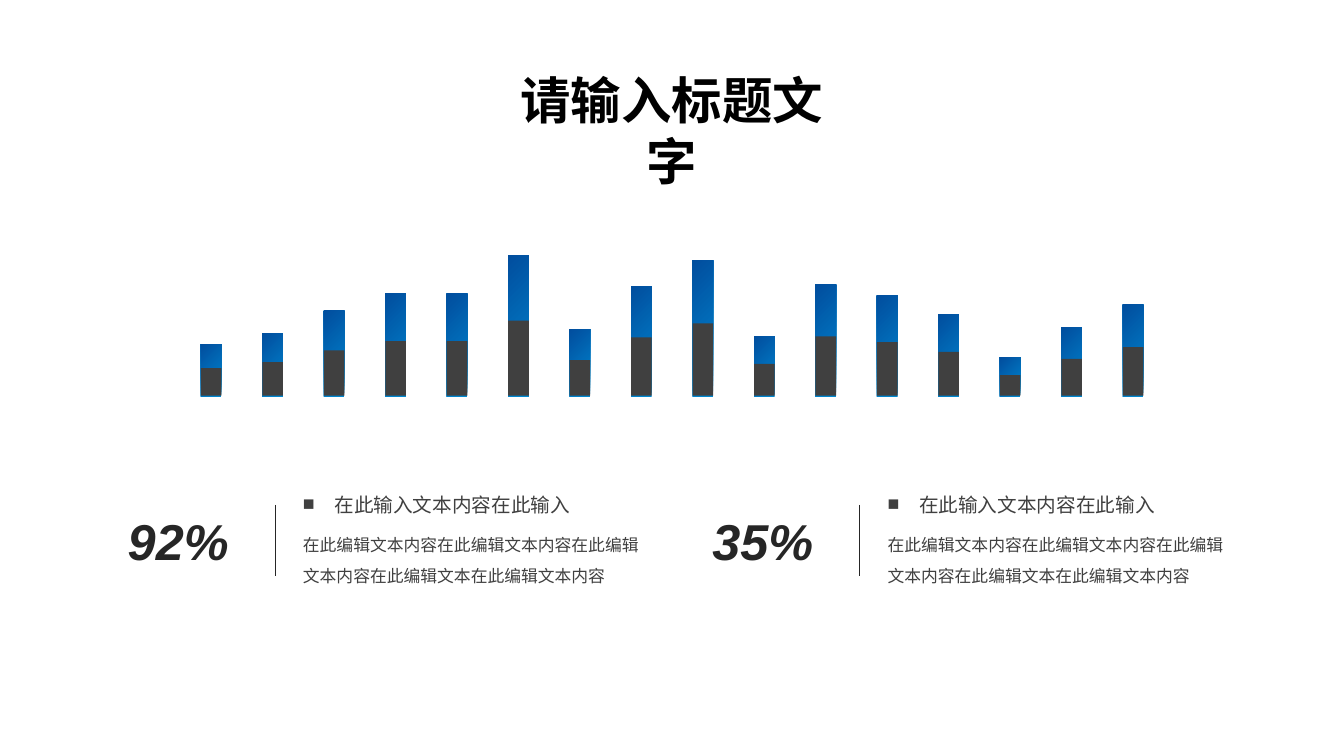
from lxml import etree
from pptx import Presentation
from pptx.dml.color import RGBColor
from pptx.enum import shapes, text
from pptx.oxml.ns import qn
from pptx.util import Pt

COLORS = {"light blue": "008AD3", "deep blue": "014E9E", "dark": "404040",
          "accent": "262626", "title": "000000"}
CJK_FONT = "Noto Sans CJK SC"
BAR_HEIGHTS = [36.7, 44.6, 60.5, 72.7, 72.7, 100.1, 47.5, 77.8,
               96.5, 42.5, 79.2, 71.3, 58.3, 27.4, 49, 64.8]
BAR_LEFT, BAR_PITCH, BAR_WIDTH = 143.5, 43.9, 14.7
BASELINE, BASE_STRIP, DARK_SHARE = 282.6, 0.7, 0.535
STATISTICS = [(84.2, 112.3, "92%"), (501.8, 95, "35%")]
DIVIDERS = [196.6, 614.2]
HEADING = "在此输入文本内容在此输入"
BODY = "在此编辑文本内容在此编辑文本内容在此编辑文本内容在此编辑文本在此编辑文本内容"


def color(name):
    return RGBColor.from_string(COLORS[name])


def write(shape, words, color_name, format_values, wrap=True):
    """Fill the shape with one formatted paragraph and return it."""
    frame = shape.text_frame
    frame.word_wrap = wrap
    frame.auto_size = text.MSO_AUTO_SIZE.SHAPE_TO_FIT_TEXT
    frame.vertical_anchor = text.MSO_ANCHOR.TOP
    paragraph = frame.paragraphs[0]
    run = paragraph.add_run()
    run.text = words
    run.font.color.rgb = color(color_name)
    for name, value in format_values.items():
        setattr(run.font, name, value)
    etree.SubElement(run.font._element, qn("a:ea"), typeface=CJK_FONT)
    return paragraph


presentation = Presentation()
presentation.slide_width, presentation.slide_height = Pt(960), Pt(540)
slide = presentation.slides.add_slide(presentation.slide_layouts[5])

title = slide.shapes.title
title.left, title.top, title.width, title.height = Pt(346.6), Pt(46.1), Pt(266.4), Pt(51)
paragraph = write(title, "请输入标题文字", "title",
                  {"size": Pt(36), "bold": True, "name": CJK_FONT}, wrap=False)
paragraph.alignment = text.PP_ALIGN.CENTER

# Bars: a blue total with a dark share standing in front of it
for index, height in enumerate(BAR_HEIGHTS):
    left = BAR_LEFT + index * BAR_PITCH
    dark_height = height * DARK_SHARE
    total = slide.shapes.add_shape(
        shapes.MSO_SHAPE.RECTANGLE, Pt(left), Pt(BASELINE - height),
        Pt(BAR_WIDTH), Pt(height + BASE_STRIP))
    total.fill.gradient()
    total.fill.gradient_angle = 135
    for stop, position, name in zip(total.fill.gradient_stops, (0, 1),
                                    ("light blue", "deep blue")):
        stop.position = position
        stop.color.rgb = color(name)
    share = slide.shapes.add_shape(
        shapes.MSO_SHAPE.RECTANGLE, Pt(left), Pt(BASELINE - dark_height),
        Pt(BAR_WIDTH), Pt(dark_height))
    share.fill.solid()
    share.fill.fore_color.rgb = color("dark")
    for bar in (total, share):
        bar.line.fill.background()
        bar.shadow.inherit = False

for (left, width, percentage), divider_left in zip(STATISTICS, DIVIDERS):
    figure = slide.shapes.add_textbox(Pt(left), Pt(360.7), Pt(width), Pt(51))
    write(figure, percentage, "accent",
          {"size": Pt(36), "bold": True, "italic": True, "name": "Arial"})

    divider = slide.shapes.add_connector(
        shapes.MSO_CONNECTOR.STRAIGHT, Pt(divider_left), Pt(360.7), Pt(divider_left), Pt(411.1))
    divider.line.color.rgb = color("accent")
    divider.line.width = Pt(0.5)
    etree.SubElement(divider._element.spPr, qn("a:effectLst"))

    text_left = divider_left + 12.7
    heading = slide.shapes.add_textbox(Pt(text_left), Pt(339.8), Pt(209.5), Pt(30.2))
    paragraph = write(heading, HEADING, "dark", {"size": Pt(14), "name": "Arial"})
    properties = paragraph._p.get_or_add_pPr()
    properties.set("marL", str(Pt(22.5)))
    properties.set("indent", str(Pt(-22.5)))
    etree.SubElement(properties, qn("a:buFont"), typeface="Arial")
    etree.SubElement(properties, qn("a:buChar"), char="■")
    paragraph.line_spacing = 1.5

    body = slide.shapes.add_textbox(Pt(text_left), Pt(371.5), Pt(255.6), Pt(51))
    paragraph = write(body, BODY, "dark", {"size": Pt(12), "name": "Arial"})
    paragraph.line_spacing = 1.5

presentation.save("out.pptx")
